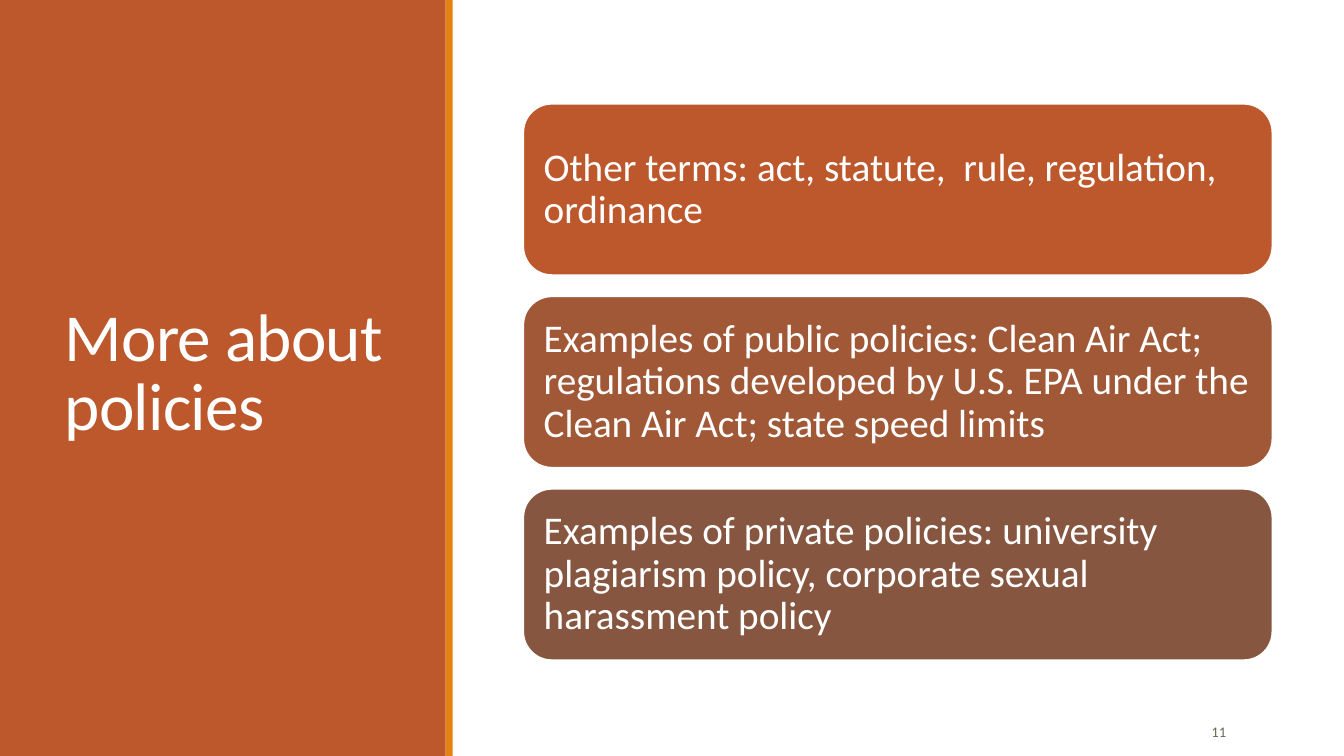
from pptx import Presentation
from pptx.dml.color import RGBColor
from pptx.enum.shapes import MSO_SHAPE as Shape
from pptx.enum.text import MSO_ANCHOR as Anchor, MSO_AUTO_SIZE as AutoSize, PP_ALIGN as Align
from pptx.oxml.ns import qn
from pptx.util import Inches, Pt


def color(hex_code):
    return RGBColor.from_string(hex_code)


def write(shape, text, size, fill="FFFFFF", align=Align.LEFT, spacing=1.0, inset=(0.1, 0.05), tracking=0):
    frame = shape.text_frame
    frame.word_wrap = True
    frame.auto_size = AutoSize.NONE
    frame.vertical_anchor = Anchor.MIDDLE
    frame.margin_left = frame.margin_right = Inches(inset[0])
    frame.margin_top = frame.margin_bottom = Inches(inset[1])
    paragraph = frame.paragraphs[0]
    paragraph.alignment = align
    paragraph.line_spacing = spacing
    run = paragraph.add_run()
    run.text = text
    run.font.name = "Calibri"
    run.font.size = Pt(size)
    run.font.color.rgb = color(fill)
    for properties in shape.element.iter(qn("a:rPr")):
        properties.set("spc", str(int(tracking * 100)))


presentation = Presentation()
presentation.slide_width = Inches(13.33)
presentation.slide_height = Inches(7.5)
slide = presentation.slides.add_slide(presentation.slide_layouts[5])
shapes = slide.shapes

PANEL_WIDTH = 4.42
for left, width, fill in [(0, PANEL_WIDTH, "BD582C"), (PANEL_WIDTH, 0.07, "E48312")]:
    band = shapes.add_shape(Shape.RECTANGLE, Inches(left), 0, Inches(width), presentation.slide_height)
    band.shadow.inherit = False
    band.fill.solid()
    band.fill.fore_color.rgb = color(fill)
    band.line.fill.background()

title = shapes.title
title.left, title.top = Inches(0.54), Inches(0.57)
title.width, title.height = Inches(3.37), Inches(6.31)
write(title, "More about policies", 48, spacing=0.85, tracking=-0.5)
shapes.element.append(title.element)

CARD_TOP, CARD_HEIGHT, CARD_PITCH = 1.03, 1.7, 1.91
cards = [
    ("BD582C", "Other terms: act, statute,  rule, regulation, ordinance"),
    ("A05837", "Examples of public policies: Clean Air Act; regulations developed by U.S. EPA "
               "under the Clean Air Act; state speed limits"),
    ("865640", "Examples of private policies: university plagiarism policy, "
               "corporate sexual harassment policy"),
]
for row, (fill, text) in enumerate(cards):
    card = shapes.add_shape(
        Shape.ROUNDED_RECTANGLE, Inches(5.19), Inches(CARD_TOP + row * CARD_PITCH), Inches(7.43), Inches(CARD_HEIGHT)
    )
    card.shadow.inherit = False
    card.fill.solid()
    card.fill.fore_color.rgb = color(fill)
    card.line.color.rgb = color("FFFFFF")
    card.line.width = Pt(1.25)
    write(card, text, 28, spacing=0.9, inset=(0.12, 0.12))

slide_number = shapes.add_textbox(Inches(11.07), Inches(7.06), Inches(1.19), Inches(0.4))
write(slide_number, "11", 10.5, fill="637052", align=Align.RIGHT)

presentation.save("out.pptx")
